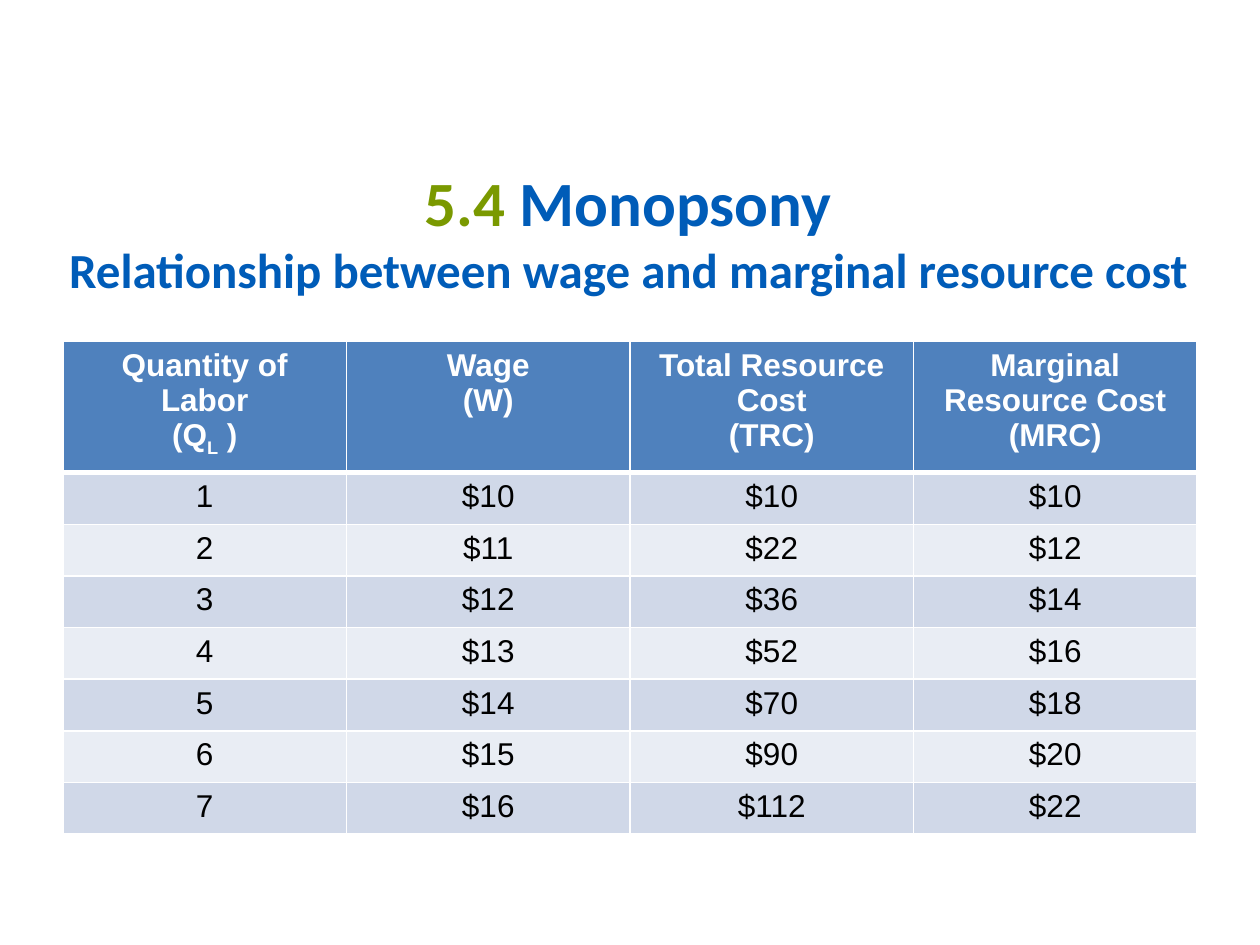
from lxml import etree
from pptx import Presentation
from pptx.dml.color import RGBColor
from pptx.enum import text as t
from pptx.oxml import ns
from pptx.util import Inches, Pt

GREEN = RGBColor(0x7A, 0x99, 0x00)
BLUE = RGBColor(0x00, 0x5C, 0xB8)
HEADER_FILL = RGBColor(0x4F, 0x81, 0xBD)
BAND_FILLS = RGBColor(0xD0, 0xD8, 0xE8), RGBColor(0xE9, 0xED, 0xF4)
WHITE = RGBColor(0xFF, 0xFF, 0xFF)
BLACK = RGBColor(0x00, 0x00, 0x00)

TITLE = [("5.4", 36, GREEN), (" Monopsony", 36, BLUE)]
SUBTITLE = ("Relationship between wage and marginal resource cost", 28, BLUE)

# Each heading is a list of paragraphs, each paragraph a list of runs.
HEADINGS = [
    [["Quantity of Labor"], ["(Q", "L", " )"]],
    [["Wage"], ["(W)"]],
    [["Total Resource Cost"], ["(TRC)"]],
    [["Marginal Resource Cost"], ["(MRC)"]],
]
SUBSCRIPT = "L"
COSTS = [  # labor, wage, total resource cost, marginal resource cost
    (1, 10, 10, 10),
    (2, 11, 22, 12),
    (3, 12, 36, 14),
    (4, 13, 52, 16),
    (5, 14, 70, 18),
    (6, 15, 90, 20),
    (7, 16, 112, 22),
]
COLUMN_WIDTH, HEADER_HEIGHT, ROW_HEIGHT = 2.25, 0.97, 0.41


def add_run(paragraph, wording, size, color, name, bold):
    run = paragraph.add_run()
    run.text = wording
    run.font.color.rgb = color
    for key, value in {"size": Pt(size), "name": name, "bold": bold}.items():
        setattr(run.font, key, value)
    return run


def add_title(slide):
    frame = slide.shapes.add_textbox(
        Inches(0.39), Inches(1.21), Inches(9.19), Inches(1.25)).text_frame
    frame.word_wrap = True
    frame.vertical_anchor = t.MSO_ANCHOR.MIDDLE
    heading = frame.paragraphs[0]
    heading.alignment = t.PP_ALIGN.CENTER
    for part in TITLE:
        add_run(heading, *part, "Calibri", True)
    heading.add_line_break()
    add_run(heading, *SUBTITLE, "Calibri", True)


def set_borders(cell, bottom_width):
    properties = cell._tc.get_or_add_tcPr()
    for side, width in {"L": 1, "R": 1, "T": 1, "B": bottom_width}.items():
        line = etree.SubElement(properties, ns.qn(f"a:ln{side}"), w=str(Pt(width)))
        fill = etree.SubElement(line, ns.qn("a:solidFill"))
        etree.SubElement(fill, ns.qn("a:srgbClr"), val=str(WHITE))


def fill_cell(cell, paragraphs, fill, color, bold, bottom_width):
    set_borders(cell, bottom_width)
    cell.fill.solid()
    cell.fill.fore_color.rgb = fill
    frame = cell.text_frame
    for index, runs in enumerate(paragraphs):
        paragraph = frame.add_paragraph() if index else frame.paragraphs[0]
        paragraph.alignment = t.PP_ALIGN.CENTER
        for wording in runs:
            run = add_run(paragraph, wording, 18, color, "Arial", bold)
            if wording == SUBSCRIPT:
                run.font._element.set("baseline", "-25000")


def add_cost_table(slide):
    rows, columns = len(COSTS) + 1, len(HEADINGS)
    table = slide.shapes.add_table(
        rows, columns, Inches(0.5), Inches(2.71), Inches(columns * COLUMN_WIDTH),
        Inches(HEADER_HEIGHT + len(COSTS) * ROW_HEIGHT)).table
    for column in table.columns:
        column.width = Inches(COLUMN_WIDTH)
    for index, row in enumerate(table.rows):
        row.height = Inches(ROW_HEIGHT if index else HEADER_HEIGHT)
    for column, heading in enumerate(HEADINGS):
        fill_cell(table.cell(0, column), heading, HEADER_FILL, WHITE, True, 3)
    for row, (labor, *dollars) in enumerate(COSTS, 1):
        wordings = [str(labor)] + [f"${amount}" for amount in dollars]
        for column, wording in enumerate(wordings):
            fill_cell(table.cell(row, column), [[wording]],
                      BAND_FILLS[(row - 1) % 2], BLACK, False, 1)


def main():
    presentation = Presentation()
    presentation.slide_width, presentation.slide_height = Inches(10), Inches(7.5)
    slide = presentation.slides.add_slide(presentation.slide_layouts[6])
    add_title(slide)
    add_cost_table(slide)
    presentation.save("out.pptx")


if __name__ == "__main__":
    main()
